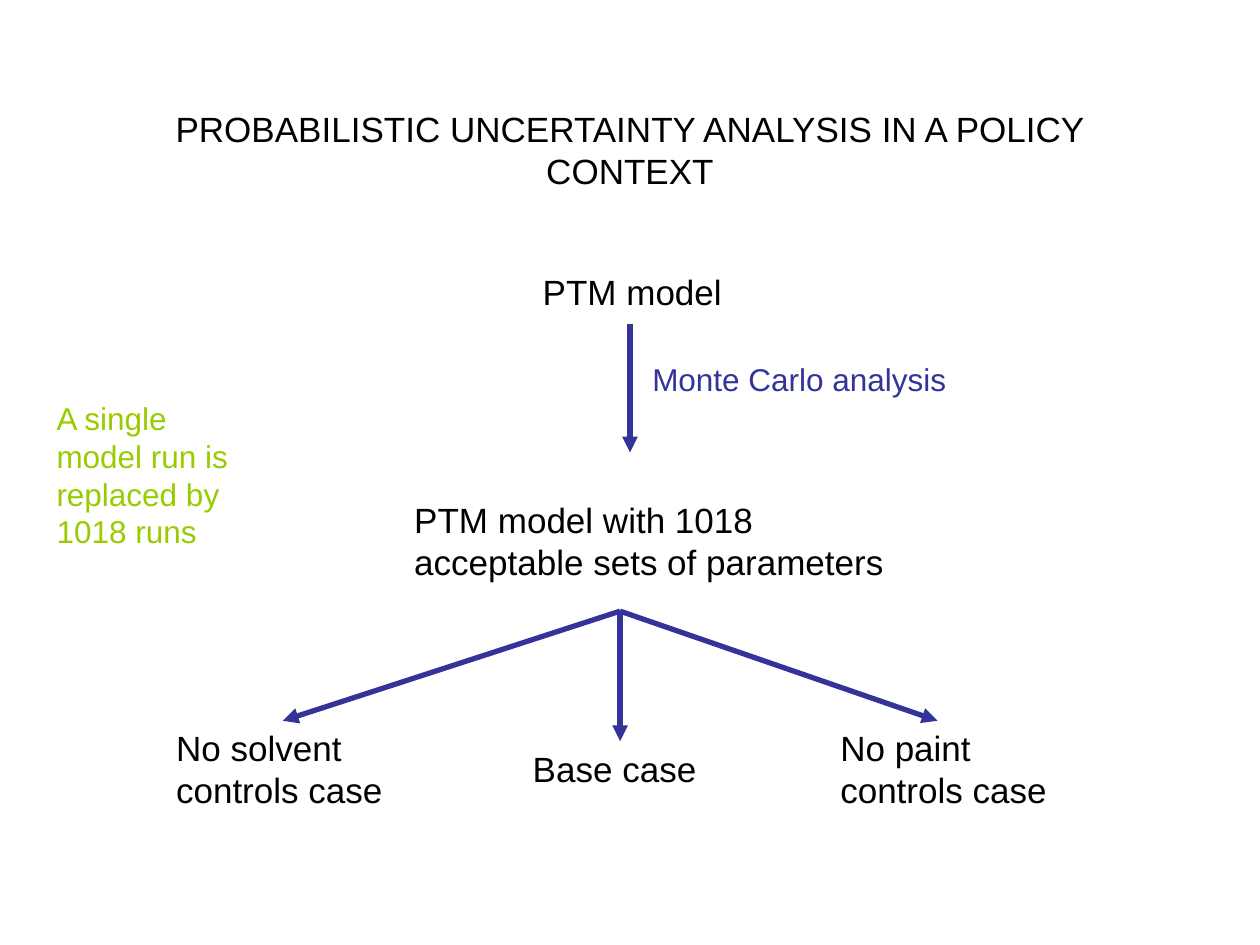
from dataclasses import dataclass

from lxml.etree import SubElement
from pptx import Presentation
from pptx.dml.color import RGBColor
from pptx.enum.shapes import MSO_CONNECTOR
from pptx.enum.text import MSO_ANCHOR, MSO_AUTO_SIZE, PP_ALIGN
from pptx.oxml.ns import qn
from pptx.util import Cm, Pt


@dataclass(frozen=True)
class Theme:
    font: str = "Arial"
    black: RGBColor = RGBColor(0x00, 0x00, 0x00)
    indigo: RGBColor = RGBColor(0x33, 0x33, 0x99)
    lime: RGBColor = RGBColor(0x99, 0xCC, 0x00)
    main_size: Pt = Pt(20)
    note_size: Pt = Pt(18)
    arrow_width: Pt = Pt(3)


class SlideBuilder:
    def __init__(self, slide, theme):
        self.slide = slide
        self.theme = theme

    def style(self, p, size, color):
        p.font.name = self.theme.font
        p.font.size = size
        p.font.color.rgb = color

    def title(self, text, left, top, width, height):
        sp = self.slide.shapes.title
        sp.left, sp.top, sp.width, sp.height = map(Cm, (left, top, width, height))
        tf = sp.text_frame
        tf.text = text
        tf.word_wrap = True
        tf.auto_size = MSO_AUTO_SIZE.NONE
        tf.vertical_anchor = MSO_ANCHOR.MIDDLE
        p = tf.paragraphs[0]
        p.alignment = PP_ALIGN.CENTER
        self.style(p, self.theme.main_size, self.theme.black)

    def label(self, text, left, top, width, height, size=None, color=None):
        sp = self.slide.shapes.add_textbox(*map(Cm, (left, top, width, height)))
        tf = sp.text_frame
        tf.text = text
        tf.word_wrap = True
        tf.auto_size = MSO_AUTO_SIZE.SHAPE_TO_FIT_TEXT
        self.style(tf.paragraphs[0], size or self.theme.main_size,
                   color or self.theme.black)
        return sp

    def arrow(self, start, end, target=None):
        cxn = self.slide.shapes.add_connector(
            MSO_CONNECTOR.STRAIGHT, *map(Cm, (*start, *end)))
        cxn.line.color.rgb = self.theme.indigo
        cxn.line.width = self.theme.arrow_width
        # Arrowhead, and no theme shadow
        SubElement(cxn.line._get_or_add_ln(), qn("a:tailEnd"), type="triangle")
        SubElement(cxn._element.spPr, qn("a:effectLst"))
        if target is not None:
            cxn.end_connect(target, 0)


def main():
    prs = Presentation()
    prs.slide_width, prs.slide_height = Cm(25.4), Cm(19.05)
    s = prs.slides.add_slide(prs.slide_layouts[0])
    subtitle = s.placeholders[1]._element
    subtitle.getparent().remove(subtitle)
    theme = Theme()
    b = SlideBuilder(s, theme)

    # Title
    b.title("PROBABILISTIC UNCERTAINTY ANALYSIS IN A POLICY CONTEXT",
            1.9, 1.93, 21.6, 2.18)

    # Model stages
    b.label("PTM model", 10.69, 5.33, 4.4, 1.1)
    b.label("PTM model with 1018 acceptable sets of parameters",
            8.1, 9.93, 10.21, 1.96)
    b.arrow((12.7, 6.53), (12.7, 9.12))

    # Side notes
    b.label("Monte Carlo analysis", 12.9, 7.14, 7.21, 1.02,
            theme.note_size, theme.indigo)
    b.label("A single model run is replaced by 1018 runs",
            0.89, 7.92, 4.6, 3.3, theme.note_size, theme.lime)

    # Policy cases
    case_top, base_top = 14.53, 14.94
    no_solvent = b.label("No solvent controls case", 3.3, case_top, 4.8, 1.96)
    b.label("Base case", 10.49, base_top, 5.79, 1.1)
    b.label("No paint controls case", 16.69, case_top, 5.38, 1.96)

    # Branches from the parameter sets to the cases
    fork = (12.5, 12.32)
    b.arrow(fork, (5.7, case_top), no_solvent)
    b.arrow(fork, (12.5, base_top))
    b.arrow(fork, (18.9, case_top))

    prs.save("out.pptx")


if __name__ == "__main__":
    main()
